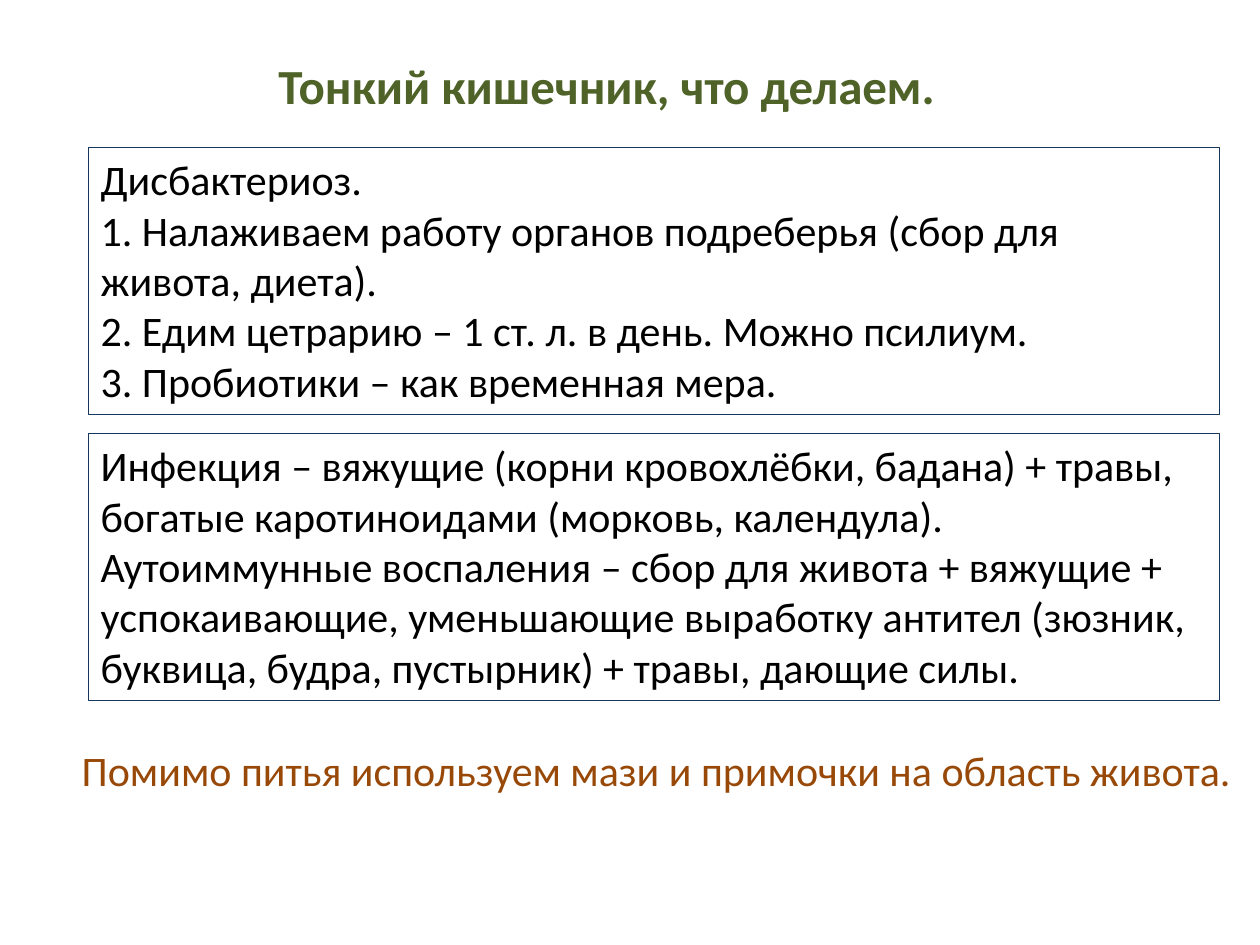
from dataclasses import dataclass

import pptx
import pptx.dml.color
import pptx.enum.shapes
import pptx.enum.text
import pptx.shapes.autoshape
import pptx.slide
import pptx.text.text
import pptx.util

Inches = pptx.util.Inches
RGBColor = pptx.dml.color.RGBColor

GREEN = RGBColor(0x4F, 0x62, 0x28)
NAVY = RGBColor(0x17, 0x37, 0x5E)
BLACK = RGBColor(0x00, 0x00, 0x00)
BROWN = RGBColor(0x98, 0x48, 0x07)

BOX_LEFT, BOX_TOP, BOX_WIDTH, BOX_HEIGHT = 0.7, 1.17, 8.98, 2.12
BOX_STEP = 2.27


@dataclass
class Advice:
    paragraphs: list[str]


ADVICE = [
    Advice([
        "Дисбактериоз.\n"
        "1. Налаживаем работу органов подреберья (сбор для живота, диета).",
        "2. Едим цетрарию – 1 ст. л. в день. Можно псилиум.\n"
        "3. Пробиотики – как временная мера.",
    ]),
    Advice([
        "Инфекция – вяжущие (корни кровохлёбки, бадана) + травы, "
        "богатые каротиноидами (морковь, календула).\n"
        "Аутоиммунные воспаления – сбор для живота + вяжущие + "
        "успокаивающие, уменьшающие выработку антител (зюзник, буквица, "
        "будра, пустырник) + травы, дающие силы.",
    ]),
]


def write(tf: pptx.text.text.TextFrame, paragraphs: list[str],
          color: RGBColor, size: int = 24, bold: bool = False) -> None:
    tf.word_wrap = True
    tf.auto_size = pptx.enum.text.MSO_AUTO_SIZE.SHAPE_TO_FIT_TEXT
    tf.vertical_anchor = pptx.enum.text.MSO_ANCHOR.TOP
    for i, text in enumerate(paragraphs):
        p = tf.paragraphs[0] if i == 0 else tf.add_paragraph()
        p.text = text
        p.alignment = pptx.enum.text.PP_ALIGN.LEFT
        for r in p.runs:
            r.font.name = "Calibri"
            r.font.size = pptx.util.Pt(size)
            r.font.bold = bold
            r.font.color.rgb = color


def add_title(s: pptx.slide.Slide, text: str) -> None:
    sp = s.shapes.title
    sp.left, sp.top = Inches(2.11), Inches(0.39)
    sp.width, sp.height = Inches(5.47), Inches(0.57)
    write(sp.text_frame, [text], GREEN, size=28, bold=True)
    sp.text_frame.word_wrap = False


def add_advice(s: pptx.slide.Slide, advice: Advice,
               top: float) -> pptx.shapes.autoshape.Shape:
    sp = s.shapes.add_shape(
        pptx.enum.shapes.MSO_SHAPE.RECTANGLE, Inches(BOX_LEFT), Inches(top),
        Inches(BOX_WIDTH), Inches(BOX_HEIGHT))
    sp.shadow.inherit = False
    sp.fill.background()
    sp.line.color.rgb = NAVY
    sp.line.width = pptx.util.Pt(0.75)
    write(sp.text_frame, advice.paragraphs, BLACK)
    return sp


def add_note(s: pptx.slide.Slide, text: str) -> None:
    sp = s.shapes.add_textbox(
        Inches(0.55), Inches(5.86), Inches(9.61), Inches(0.5))
    write(sp.text_frame, [text], BROWN)


def main() -> None:
    prs = pptx.Presentation()
    prs.slide_width, prs.slide_height = Inches(10), Inches(7.5)
    s = prs.slides.add_slide(prs.slide_layouts.get_by_name("Title Only"))
    add_title(s, "Тонкий кишечник, что делаем.")
    for i, advice in enumerate(ADVICE):
        add_advice(s, advice, BOX_TOP + i * BOX_STEP)
    add_note(s, "Помимо питья используем мази и примочки на область живота.")
    prs.save("out.pptx")


if __name__ == "__main__":
    main()
